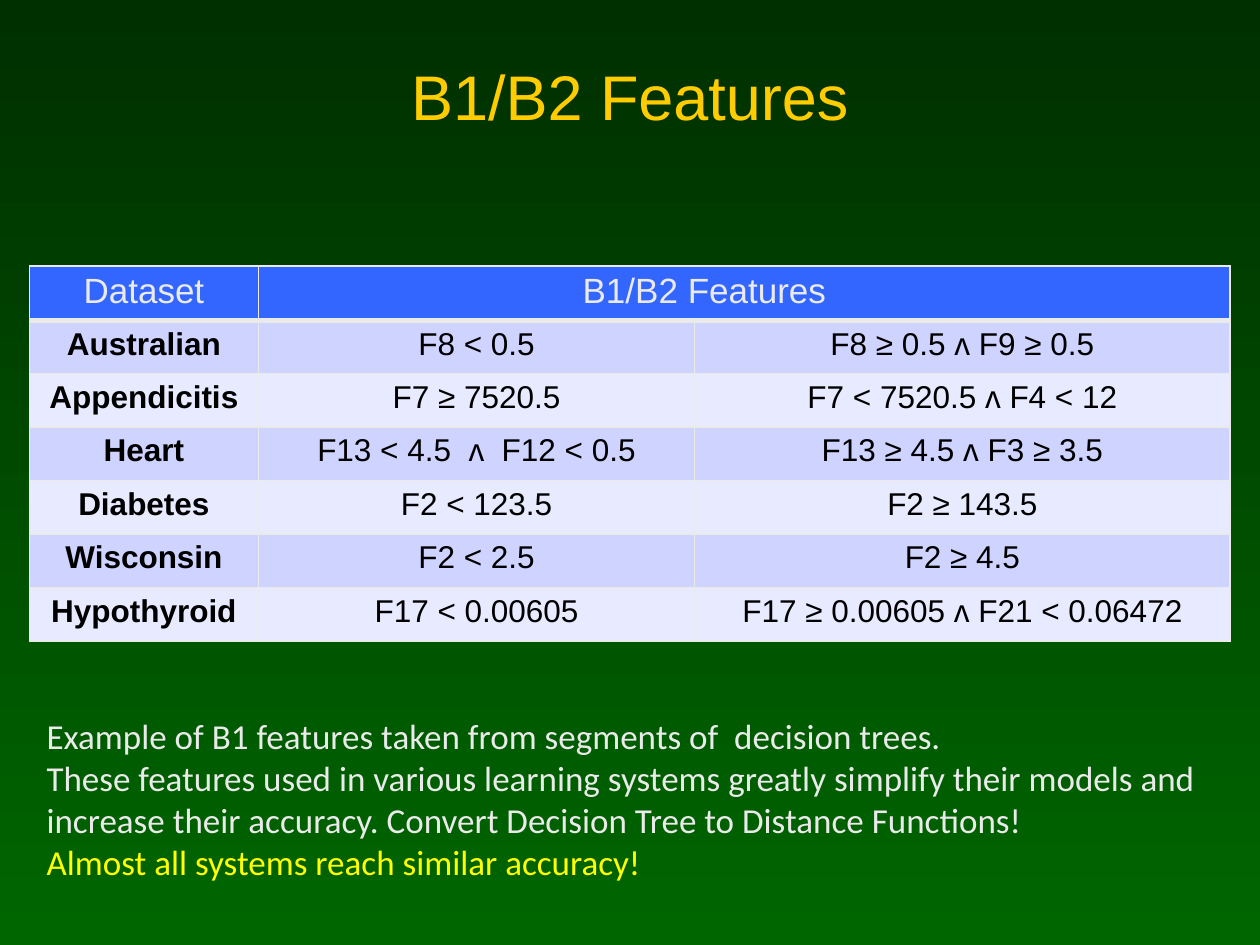
from lxml import etree
from pptx import Presentation
from pptx.dml.color import RGBColor as Rgb
from pptx.enum.text import MSO_ANCHOR as Anchor, MSO_AUTO_SIZE as Fit, PP_ALIGN as Align
from pptx.oxml.ns import qn
from pptx.util import Pt

HUES = {"dark": "002F00", "green": "006600", "gold": "FFCC00", "yellow": "FFFF00",
        "pale": "EAEAEA", "blue": "3366FF", "odd": "CED3FF", "even": "E8EAFF",
        "black": "000000"}
COLS = [131, 249.25, 306]
ROWS = [
    ("Dataset", "B1/B2 Features", ""),
    ("Australian", "F8 < 0.5", "F8 ≥ 0.5 ᴧ F9 ≥ 0.5"),
    ("Appendicitis", "F7 ≥ 7520.5", "F7 < 7520.5 ᴧ F4 < 12"),
    ("Heart", "F13 < 4.5  ᴧ  F12 < 0.5", "F13 ≥ 4.5 ᴧ F3 ≥ 3.5"),
    ("Diabetes", "F2 < 123.5", "F2 ≥ 143.5"),
    ("Wisconsin", "F2 < 2.5", "F2 ≥ 4.5"),
    ("Hypothyroid", "F17 < 0.00605", "F17 ≥ 0.00605 ᴧ F21 < 0.06472"),
]
NOTES = [
    ("Example of B1 features taken from segments of  decision trees.", "pale"),
    ("These features used in various learning systems greatly simplify their models "
     "and increase their accuracy. Convert Decision Tree to Distance Functions!", "pale"),
    ("Almost all systems reach similar accuracy!", "yellow"),
]


def rgb(hue):
    return Rgb.from_string(HUES[hue])


def add(parent, tag, **attrs):
    return etree.SubElement(parent, qn(tag), {k: str(v) for k, v in attrs.items()})


class Deck:
    def __init__(self, slide, face="Arial"):
        self.slide, self.face = slide, face

    def ink(self, para, size, hue, bold=False, face=None):
        for run in para.runs:
            font = run.font
            font.name, font.size, font.bold = face or self.face, Pt(size), bold
            font.color.rgb = rgb(hue)

    def back(self, top, base):
        fill = self.slide.background.fill
        fill.gradient()
        fill.gradient_angle = 270
        for stop, hue in zip(fill.gradient_stops, (top, base)):
            stop.color.rgb = rgb(hue)

    def title(self, text, x, y, w, h):
        shape = self.slide.shapes.title
        shape.left, shape.top, shape.width, shape.height = map(Pt, (x, y, w, h))
        frame = shape.text_frame
        frame.text, frame.vertical_anchor = text, Anchor.MIDDLE
        para = frame.paragraphs[0]
        para.alignment = Align.CENTER
        self.ink(para, 36, "gold")
        self.shade(para.runs[0])

    def shade(self, run):
        """Drop a hard black shadow behind the run's letters."""
        props = run.font._element if hasattr(run.font, "_element") else run._r.rPr
        effect = etree.Element(qn("a:effectLst"))
        props.find(qn("a:solidFill")).addnext(effect)
        drop = add(effect, "a:outerShdw", dist=Pt(3), dir=2700000)
        add(drop, "a:srgbClr", val=HUES["black"])

    def edge(self, cell, base):
        props = cell._tc.get_or_add_tcPr()
        for side, width in zip("LRTB", (1, 1, 1, base)):
            line = add(props, f"a:ln{side}", w=Pt(width))
            add(add(line, "a:solidFill"), "a:srgbClr", val=HUES["pale"])

    def cell(self, cell, text, fill, size, hue, bold, base):
        self.edge(cell, base)
        cell.fill.solid()
        cell.fill.fore_color.rgb = rgb(fill)
        cell.text_frame.text = text
        para = cell.text_frame.paragraphs[0]
        para.alignment = Align.CENTER
        self.ink(para, size, hue, bold)

    def table(self, rows, cols, x, y, head, step):
        high = head + step * (len(rows) - 1)
        grid = self.slide.shapes.add_table(
            len(rows), len(cols), Pt(x), Pt(y), Pt(sum(cols)), Pt(high)).table
        grid.horz_banding = False
        for col, width in zip(grid.columns, cols):
            col.width = Pt(width)
        for r, row in enumerate(rows):
            grid.rows[r].height = Pt(step if r else head)
            for c, text in enumerate(row):
                if r == 0:
                    look = ("blue", 20, "pale", False, 3)
                else:
                    look = ("odd" if r % 2 else "even", 18, "black", c == 0, 1)
                self.cell(grid.cell(r, c), text, *look)
        span = grid.cell(0, 1)
        span.merge(grid.cell(0, len(cols) - 1))
        para = span.text_frame.paragraphs[0]
        para.alignment = Align.LEFT
        para._p.get_or_add_pPr().set("marL", str(Pt(178)))

    def notes(self, lines, x, y, w, h):
        frame = self.slide.shapes.add_textbox(Pt(x), Pt(y), Pt(w), Pt(h)).text_frame
        frame.word_wrap, frame.auto_size = True, Fit.SHAPE_TO_FIT_TEXT
        frame.text = "\n".join(text for text, _ in lines)
        for para, (_, hue) in zip(frame.paragraphs, lines):
            self.ink(para, 20, hue, face="Calibri")


def main():
    prs = Presentation()
    prs.slide_width, prs.slide_height = Pt(720), Pt(540)
    deck = Deck(prs.slides.add_slide(prs.slide_layouts[5]))
    deck.back("dark", "green")
    deck.title("B1/B2 Features", 54, 20, 612, 68.5)
    deck.table(ROWS, COLS, 16.75, 152, 31, 30.55)
    deck.notes(NOTES, 19.5, 404.5, 677.5, 104.5)
    prs.save("out.pptx")


if __name__ == "__main__":
    main()
